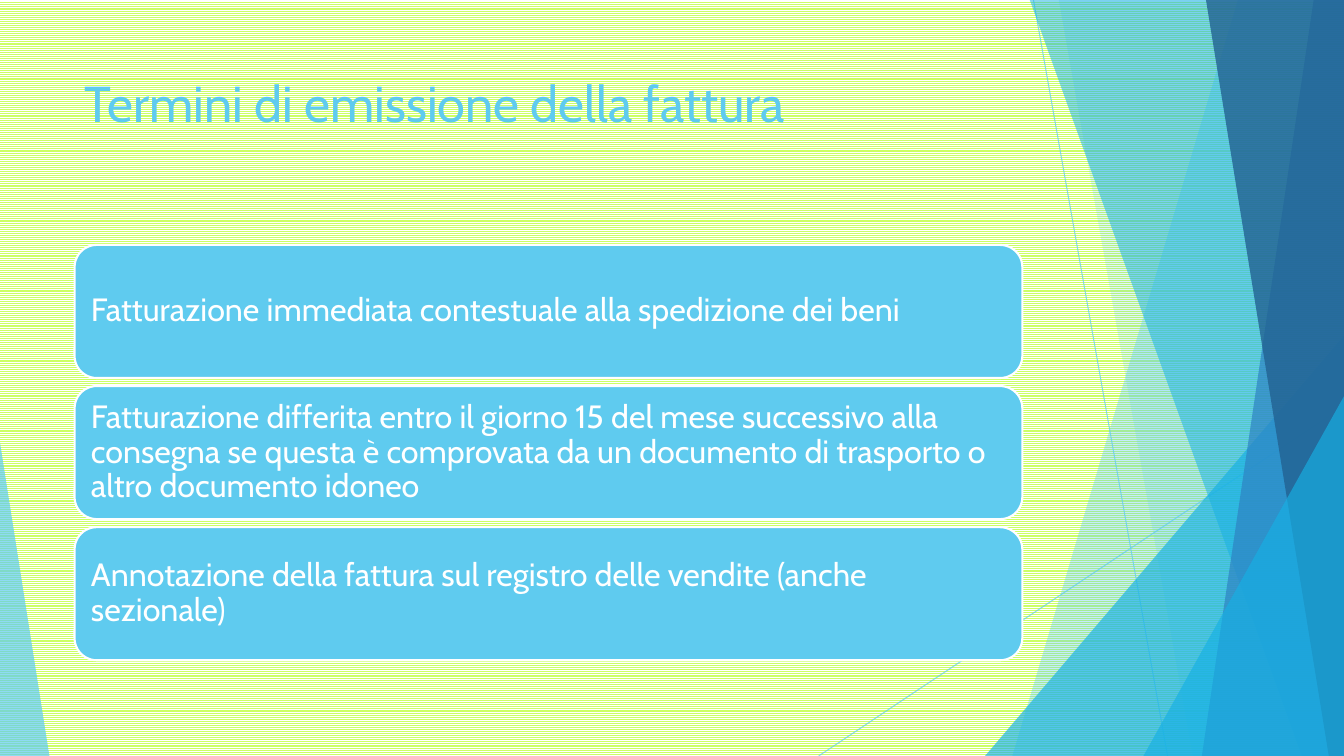
from pptx import Presentation, util as u
from pptx.dml.color import RGBColor
from pptx.enum import dml, shapes, text
from pptx.oxml.ns import qn
from lxml import etree

PX = 9144  # 100 px to the inch
W, H = 1333, 750
HUES = {"sky": "5FCBEF", "cyan": "17B0E4", "blue": "2E83C3", "navy": "226292",
        "lime": "CCFF66", "white": "FFFFFF"}


def px(*nums):
    return [u.Emu(n * PX) for n in nums]


def paint(fill, hue, alpha=100):
    """Fill solidly with a hue at an opacity in percent."""
    fill.solid()
    fill.fore_color.rgb = RGBColor.from_string(HUES[hue])
    if alpha < 100:
        clr = fill._xPr.find(qn("a:solidFill"))[0]
        etree.SubElement(clr, qn("a:alpha")).set("val", str(alpha * 1000))


deck = Presentation()
deck.slide_width, deck.slide_height = px(W, H)
slide = deck.slides.add_slide(deck.slide_layouts[5])
tree = slide.shapes

back = slide.background.fill
back.patterned()
back.pattern = dml.MSO_PATTERN.LIGHT_HORIZONTAL
back.fore_color.rgb = RGBColor.from_string(HUES["lime"])
back.back_color.rgb = RGBColor.from_string(HUES["white"])

# Thin lines behind the facets
for ends in [(1025, 0, 1158, H), (W, 403, 812, H)]:
    line = tree.add_connector(shapes.MSO_CONNECTOR.STRAIGHT, *px(*ends))
    line.line.width = u.Pt(0.75)
    paint(line.line.fill, "sky", 70)
    etree.SubElement(line._element.spPr, qn("a:effectLst"))

# Facets: a band is (top x, foot x) up to the right edge,
# a triangle is (left, top, width, apex position)
facets = [
    ("band", (1228, 1004), "sky", 36),
    ("band", (1050, 1183), "sky", 20),
    ("tri", (977, 333, 356, 1), "cyan", 66),
    ("band", (1021, 1291), "cyan", 50),
    ("band", (1303, 1192), "blue", 70),
    ("band", (1196, 1318), "navy", 80),
    ("tri", (1134, 393, 199, 1), "cyan", 66),
    ("tri", (0, 439, 49, 0), "sky", 70),
]
for kind, geo, hue, alpha in facets:
    if kind == "band":
        top, foot = geo
        pen = tree.build_freeform(top, -1, scale=PX)
        pen.add_line_segments([(W, -1), (W, H), (foot, H)], close=True)
        facet = pen.convert_to_shape()
    else:
        left, top, wide, apex = geo
        facet = tree.add_shape(shapes.MSO_SHAPE.ISOSCELES_TRIANGLE,
                               *px(left, top, wide, H - top))
        facet.adjustments[0] = apex
    facet.shadow.inherit = False
    facet.line.fill.background()
    paint(facet.fill, hue, alpha)

title = tree.title
title.left, title.top, title.width, title.height = px(74, 67, 940, 144)
title.text_frame.text = "Termini di emissione della fattura"
tree._spTree.append(title._element)
items = [(title, 36, "sky", text.MSO_ANCHOR.TOP, 1, (10, 5))]

terms = [
    "Fatturazione immediata contestuale alla spedizione dei beni",
    "Fatturazione differita entro il giorno 15 del mese successivo alla consegna "
    "se questa è comprovata da un documento di trasporto o altro documento idoneo",
    "Annotazione della fattura sul registro delle vendite (anche sezionale)",
]
for row, term in enumerate(terms):
    card = tree.add_shape(shapes.MSO_SHAPE.ROUNDED_RECTANGLE,
                          *px(74, 243 + 140 * row, 940, 132))
    card.shadow.inherit = False
    paint(card.fill, "sky")
    paint(card.line.fill, "white")
    card.line.width = u.Pt(1.5)
    card.text_frame.text = term
    items.append((card, 23, "white", text.MSO_ANCHOR.MIDDLE, 0.9, (10, 10)))

for shape, size, hue, anchor, space, (side, edge) in items:
    frame = shape.text_frame
    side, edge = px(side, edge)
    form = {"word_wrap": True, "auto_size": text.MSO_AUTO_SIZE.NONE,
            "vertical_anchor": anchor, "margin_left": side, "margin_right": side,
            "margin_top": edge, "margin_bottom": edge}
    for key, val in form.items():
        setattr(frame, key, val)
    para = frame.paragraphs[0]
    para.alignment = text.PP_ALIGN.LEFT
    para.line_spacing = space
    font = para.runs[0].font
    font.name, font.size = "Cabin", u.Pt(size)
    paint(font.fill, hue)

deck.save("out.pptx")
